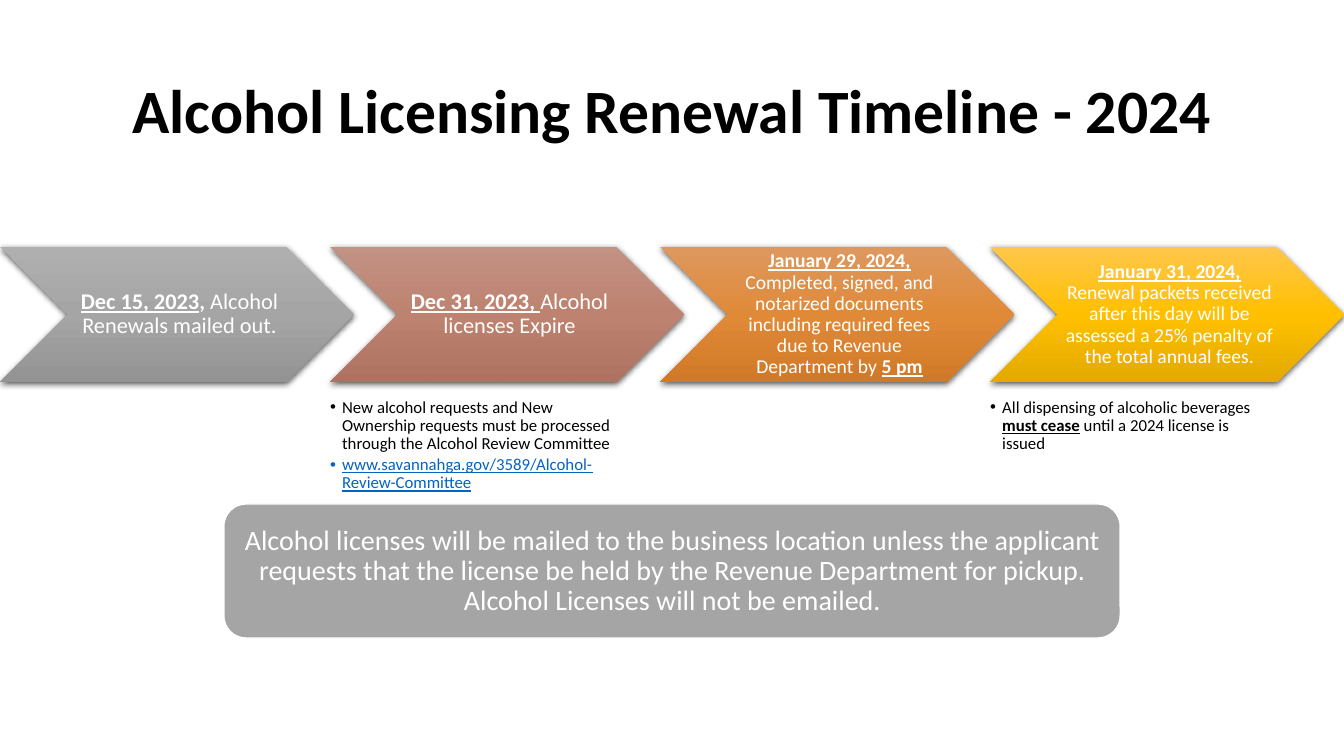
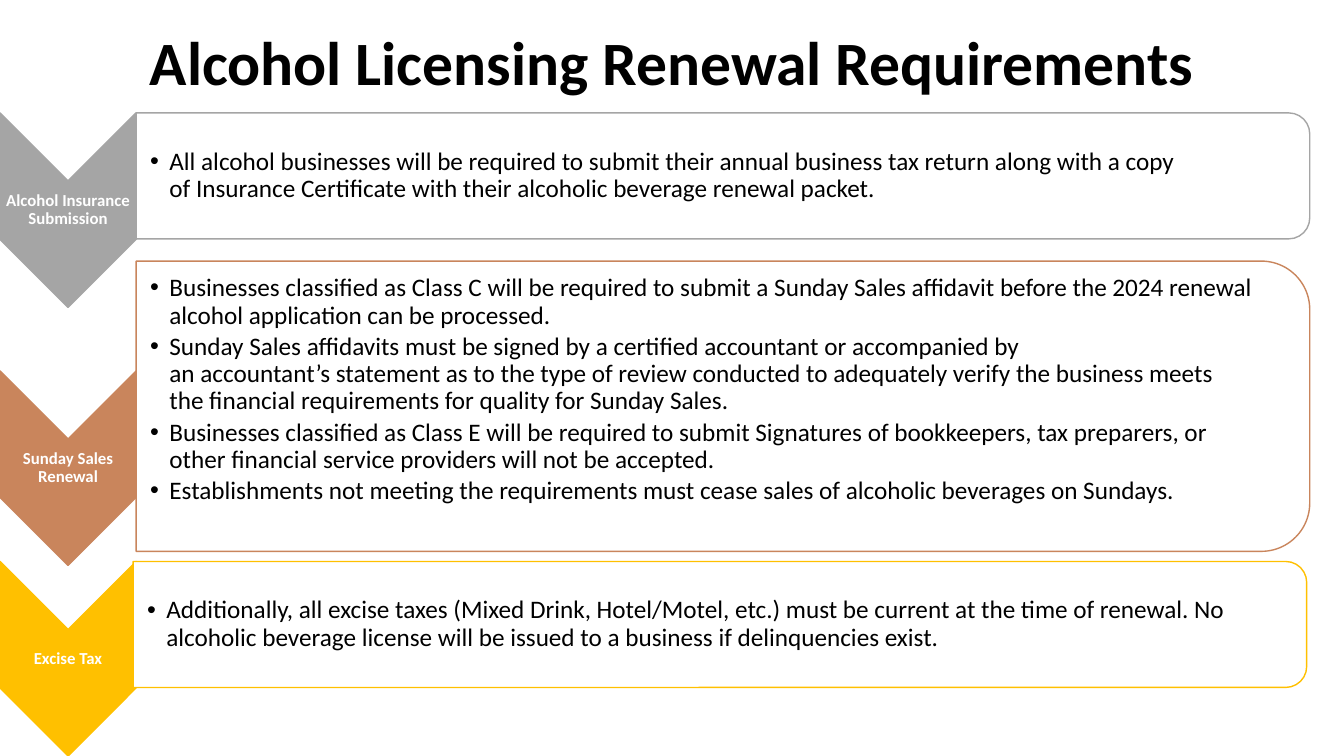
import copy
import dataclasses

import lxml.etree
import pptx
import pptx.dml.color
import pptx.enum.shapes
import pptx.enum.text
import pptx.oxml.ns
import pptx.util

Inches, Pt = pptx.util.Inches, pptx.util.Pt
KIND = pptx.enum.shapes.MSO_SHAPE
ALIGN = pptx.enum.text.PP_ALIGN
ANCHOR = pptx.enum.text.MSO_ANCHOR
qn = pptx.oxml.ns.qn


@dataclasses.dataclass(frozen=True)
class Theme:
    font: str = "Calibri"
    black: str = "000000"
    white: str = "FFFFFF"
    gray: str = "A5A5A5"
    clay: str = "C9855C"
    gold: str = "FFC000"
    link: str = "0563C1"
    title: int = 44
    note: int = 20
    body: int = 18
    small: int = 12
    line: float = 0.9


T = Theme()

# Run styles: b is bold, u is underlined, l is link colour.
STEPS = [
    {"grad": ("AFAFAF", "A5A5A5", "939393"), "size": 16,
     "runs": [("Dec 15, 2023", "bu"), (", ", "b"),
              ("Alcohol Renewals mailed out.", "")],
     "notes": []},
    {"grad": ("C29284", "BE8270", "AD7260"), "size": 16,
     "runs": [("Dec 31, 2023,", "bu"), (" ", "u"),
              ("Alcohol licenses Expire", "")],
     "notes": [[("New alcohol requests and New Ownership requests must be "
                 "processed through the Alcohol Review Committee", "")],
               [("www.savannahga.gov/3589/Alcohol-Review-Committee", "lu")]]},
    {"grad": ("DE985E", "E08A38", "D07A29"), "size": 14,
     "runs": [("January 29, 2024, ", "bu"),
              ("Completed, signed, and notarized documents including "
               "required fees due to Revenue Department by ", ""),
              ("5 pm", "bu")],
     "notes": []},
    {"grad": ("FFC64B", "FFC000", "E3AA00"), "size": 14,
     "runs": [("January 31, 2024,", "bu"), (" ", "b"),
              ("Renewal packets received after this day will be assessed "
               "a 25% penalty of the total annual fees.", "")],
     "notes": [[("All dispensing of alcoholic beverages ", ""),
                ("must cease", "bu"),
                (" until a 2024 license is issued", "")]]},
]
NOTICE = ("Alcohol licenses will be mailed to the business location unless "
          "the applicant requests that the license be held by the Revenue "
          "Department for pickup. Alcohol Licenses will not be emailed.")

# Positions in inches; lift raises centred text; ~ is a no-break space.
RULES = [
    {"name": "Alcohol Insurance Submission", "color": T.gray,
     "arrow": 1.12, "left": 1.35, "top": 1.12, "high": 1.25, "lift": 0,
     "points": [
         "All alcohol businesses will be required to submit their annual "
         "business tax return along with a copy of~Insurance "
         "Certificate~with their alcoholic beverage renewal packet."]},
    {"name": "Sunday Sales Renewal", "color": T.clay,
     "arrow": 3.68, "left": 1.35, "top": 2.59, "high": 2.88, "lift": 0.16,
     "points": [
         "Businesses classified as Class C will be required to submit a "
         "Sunday Sales affidavit before the 2024 renewal "
         "alcohol~application can be processed.",
         "Sunday Sales affidavits must be signed by a certified accountant "
         "or accompanied by an~accountant’s~statement as to the type of "
         "review conducted to adequately verify the business meets "
         "the~financial~requirements for quality for Sunday Sales.",
         "Businesses classified as Class E will be required to submit "
         "Signatures of bookkeepers, tax preparers, or "
         "other~financial~service providers will not be accepted.",
         "Establishments not meeting the requirements must cease sales of "
         "alcoholic beverages on Sundays."]},
    {"name": "Excise Tax", "color": T.gold,
     "arrow": 5.57, "left": 1.32, "top": 5.57, "high": 1.25, "lift": 0,
     "points": [
         "Additionally, all excise taxes (Mixed Drink, Hotel/Motel, etc.) "
         "must be current at the time of renewal. No alcoholic~beverage "
         "license will be issued to a business if delinquencies exist."]},
]


def rgb(code):
    return pptx.dml.color.RGBColor.from_string(code)


def bullet(para, indent):
    props = para._p.get_or_add_pPr()
    props.set("marL", str(Inches(indent)))
    props.set("indent", str(-Inches(indent)))
    lxml.etree.SubElement(props, qn("a:buFont")).set("typeface", "Arial")
    lxml.etree.SubElement(props, qn("a:buChar")).set("char", "•")


def write(slide, box, paras, size, color=T.white, pad=(0, 0, 0, 0),
          anchor=ANCHOR.MIDDLE, indent=0):
    """Add a text box; an indent makes its paragraphs bullets."""
    frame = slide.shapes.add_textbox(*map(Inches, box)).text_frame
    frame.word_wrap = True
    frame.vertical_anchor = anchor
    (frame.margin_left, frame.margin_top,
     frame.margin_right, frame.margin_bottom) = map(Inches, pad)
    for i, runs in enumerate(paras):
        para = frame.add_paragraph() if i else frame.paragraphs[0]
        para.alignment = ALIGN.LEFT if indent else ALIGN.CENTER
        para.line_spacing = T.line
        if i:
            para.space_before = Pt(round(size * 0.16, 1))
        if indent:
            bullet(para, indent)
        for text, style in runs:
            run = para.add_run()
            run.text = text.replace("~", chr(160))
            font = run.font
            font.name, font.size = T.font, Pt(size)
            font.bold = "b" in style
            font.underline = "u" in style
            font.color.rgb = rgb(T.link if "l" in style else color)


def draw(slide, kind, box, fill=None, line=None):
    shape = slide.shapes.add_shape(kind, *map(Inches, box))
    shape.shadow.inherit = False
    if fill:
        shape.fill.solid()
        shape.fill.fore_color.rgb = rgb(fill)
    if line:
        shape.line.color.rgb = rgb(line)
        shape.line.width = Pt(1)
    else:
        shape.line.fill.background()
    return shape


def turn(slide, kind, box, fill, line):
    """Draw a shape turned by 90 degrees so that it covers the box."""
    left, top, wide, high = box
    shift = (wide - high) / 2
    shape = draw(slide, kind, (left + shift, top - shift, high, wide),
                 fill, line)
    shape.rotation = 90


def shade(shape, colors):
    """Give a shape a downward gradient and a soft shadow."""
    shape.fill.gradient()
    shape.fill.gradient_angle = 270
    stops = shape._element.spPr.find(".//" + qn("a:gsLst"))
    stops.append(copy.deepcopy(stops[0]))
    for i, (stop, color) in enumerate(zip(shape.fill.gradient_stops, colors)):
        stop.position = i / 2
        stop.color.rgb = rgb(color)
    effects = shape._element.spPr.find(qn("a:effectLst"))
    shadow = lxml.etree.SubElement(
        effects, qn("a:outerShdw"), blurRad=str(Pt(4.5)), dist=str(Pt(1.5)),
        dir="5400000", algn="ctr", rotWithShape="0")
    tint = lxml.etree.SubElement(shadow, qn("a:srgbClr"), val=T.black)
    lxml.etree.SubElement(tint, qn("a:alpha"), val="63000")


def start(deck, title, top, high):
    slide = deck.slides.add_slide(deck.slide_layouts[6])
    write(slide, (0.92, top, 11.5, high), [[(title, "b")]], T.title, T.black,
          pad=(0.1, 0.05, 0.1, 0.05))
    return slide


def timeline(deck):
    slide = start(deck, "Alcohol Licensing Renewal Timeline - 2024", 0.4, 1.45)
    top, wide, high = 2.45, 3.51, 1.34
    gap = (13.33 - wide) / (len(STEPS) - 1)
    for i, step in enumerate(STEPS):
        left = i * gap
        shade(draw(slide, KIND.CHEVRON, (left, top, wide, high)), step["grad"])
        write(slide, (left + high / 2, top, 2.17, high), [step["runs"]],
              step["size"], pad=(0.07, 0.02, 0.02, 0.02))
        if step["notes"]:
            write(slide, (left, 3.96, 2.81, 0.97), step["notes"], T.small,
                  T.black, anchor=ANCHOR.TOP, indent=0.12)
    draw(slide, KIND.ROUNDED_RECTANGLE, (2.22, 5, 8.89, 1.33), T.gray, T.white)
    write(slide, (2.29, 5.07, 8.76, 1.2), [[(NOTICE, "")]], T.note,
          pad=(0.08,) * 4)


def requirements(deck):
    slide = start(deck, "Alcohol Licensing Renewal Requirements", 0, 1.31)
    wide, inset = 1.35, 0.06
    for rule in RULES:
        color, arrow = rule["color"], rule["arrow"]
        left, top, high = rule["left"], rule["top"], rule["high"]
        turn(slide, KIND.CHEVRON, (0, arrow, wide, 1.93), color, color)
        write(slide, (0, arrow + wide / 2, wide, 0.58), [[(rule["name"], "b")]],
              T.small, pad=(0.01,) * 4)
        turn(slide, KIND.ROUND_2_SAME_RECTANGLE, (left, top, 11.64, high),
             T.white, color)
        write(slide, (left, top + inset, 11.5,
                      high - 2 * (inset + rule["lift"])),
              [[(point, "")] for point in rule["points"]], T.body, T.black,
              pad=(0.14, 0.01, 0.01, 0.01), indent=0.19)


def main():
    deck = pptx.Presentation()
    deck.slide_width, deck.slide_height = Inches(13.33), Inches(7.5)
    timeline(deck)
    requirements(deck)
    deck.save("out.pptx")


if __name__ == "__main__":
    main()
